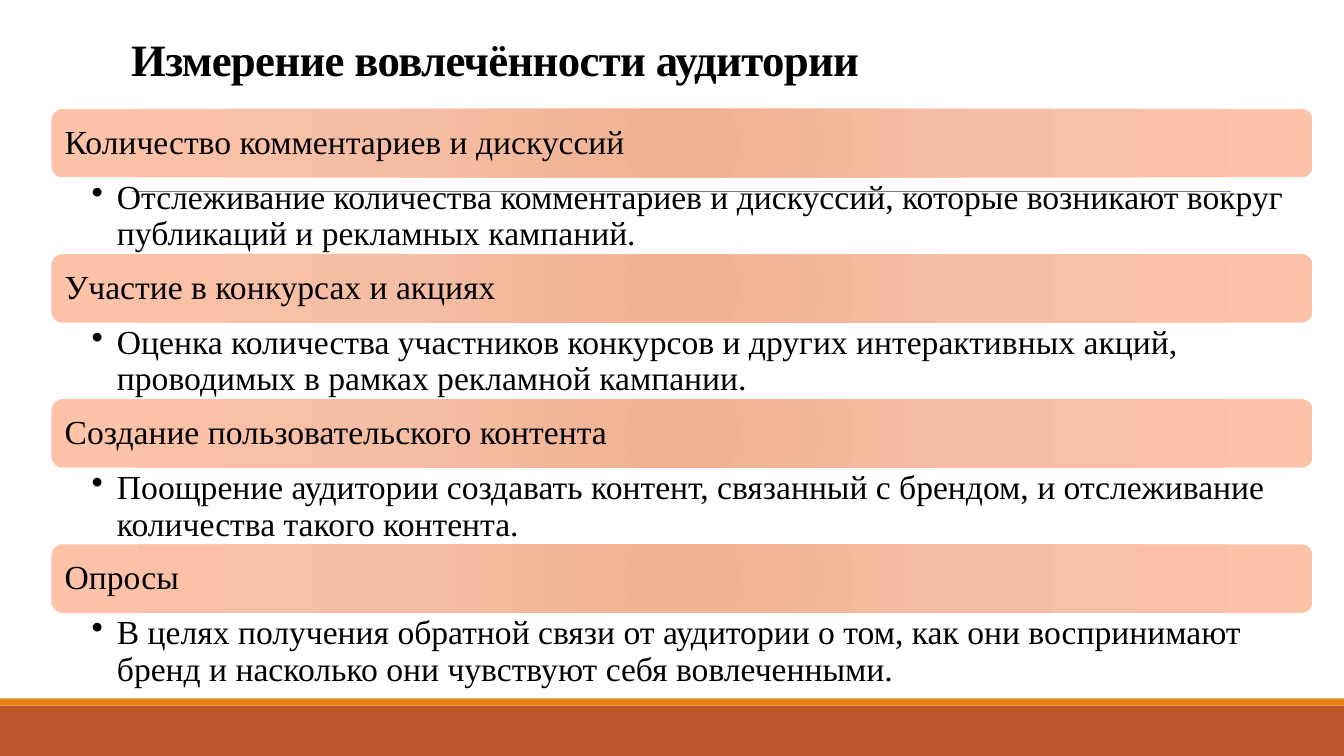
import pptx
import pptx.dml.color
import pptx.enum.shapes
import pptx.enum.text
import pptx.oxml
import pptx.oxml.ns
import pptx.util

PX = 9144  # EMU in one px, at 100 px to the inch
RGB = pptx.dml.color.RGBColor
BLACK = RGB(0x00, 0x00, 0x00)
GREY = RGB(0x80, 0x80, 0x80)
RUST = RGB(0xBD, 0x58, 0x2C)
ORANGE = RGB(0xE4, 0x83, 0x12)
BAR_STOPS = (
    (0, RGB(0xF0, 0xB1, 0x91)),
    (45, RGB(0xF5, 0xBE, 0xA4)),
    (100, RGB(0xFD, 0xC3, 0xA8)),
)
SHAPE = pptx.enum.shapes.MSO_SHAPE
ANCHOR = pptx.enum.text.MSO_ANCHOR
SLIDE_WIDTH, SLIDE_HEIGHT = 1333, 750
BODY_FONT = {"name": "Times New Roman", "size": pptx.util.Pt(24)}
TITLE_FONT = {"name": "Times New Roman", "size": pptx.util.Pt(32), "bold": True}

TITLE = "Измерение вовлечённости аудитории"
METRICS = (
    ("Количество комментариев и дискуссий",
     "Отслеживание количества комментариев и дискуссий, которые возникают "
     "вокруг публикаций и рекламных кампаний."),
    ("Участие в конкурсах и акциях",
     "Оценка количества участников конкурсов и других интерактивных акций, "
     "проводимых в рамках рекламной кампании."),
    ("Создание пользовательского контента",
     "Поощрение аудитории создавать контент, связанный с брендом, "
     "и отслеживание количества такого контента."),
    ("Опросы",
     "В целях получения обратной связи от аудитории о том, как они "
     "воспринимают бренд и насколько они чувствуют себя вовлеченными."),
)


def emu(*lengths):
    return [length * PX for length in lengths]


def xml(tag, inner="", attributes=""):
    namespace = pptx.oxml.ns.nsdecls("a")
    return pptx.oxml.parse_xml(
        f"<a:{tag} {namespace} {attributes}>{inner}</a:{tag}>")


def write(frame, text, font, anchor, insets, line_spacing):
    """Put one formatted left-aligned paragraph in the frame; return it."""
    left, top, right, bottom = emu(*insets)
    frame_format = {
        "word_wrap": True,
        "auto_size": pptx.enum.text.MSO_AUTO_SIZE.NONE,
        "vertical_anchor": anchor,
        "margin_left": left,
        "margin_top": top,
        "margin_right": right,
        "margin_bottom": bottom,
    }
    for name, value in frame_format.items():
        setattr(frame, name, value)
    paragraph = frame.paragraphs[0]
    paragraph.alignment = pptx.enum.text.PP_ALIGN.LEFT
    paragraph.line_spacing = line_spacing
    run = paragraph.add_run()
    run.text = text
    for name, value in font.items():
        setattr(run.font, name, value)
    run.font.color.rgb = BLACK
    return paragraph


def add_plain_shape(slide, kind, box):
    shape = slide.shapes.add_shape(kind, *emu(*box))
    shape.shadow.inherit = False
    shape.line.fill.background()
    return shape


def add_footer(slide, left, top, width, height):
    stripe = 7
    bands = ((RUST, top + stripe, height - stripe), (ORANGE, top, stripe))
    for color, band_top, band_height in bands:
        band = add_plain_shape(slide, SHAPE.RECTANGLE,
                               (left, band_top, width, band_height))
        band.fill.solid()
        band.fill.fore_color.rgb = color


def add_rule(slide, left, top, width):
    rule = slide.shapes.add_connector(
        pptx.enum.shapes.MSO_CONNECTOR.STRAIGHT,
        *emu(left, top, left + width, top))
    rule.line.color.rgb = GREY
    rule.line.width = pptx.util.Pt(0.5)
    rule._element.spPr.append(xml("effectLst"))


def fill_title(slide, left, top, width, height):
    title = slide.shapes.title
    title.left, title.top, title.width, title.height = emu(left, top, width, height)
    paragraph = write(title.text_frame, TITLE, TITLE_FONT, ANCHOR.BOTTOM,
                      (10, 5, 10, 5), 0.85)
    paragraph.runs[0].font._element.set("spc", "-50")


def fill_radially(shape):
    stops = "".join(
        f'<a:gs pos="{percent * 1000}"><a:srgbClr val="{color}"/></a:gs>'
        for percent, color in BAR_STOPS)
    focus = " ".join(f'{side}="100000"' for side in "ltrb")
    gradient = xml("gradFill",
                   f"<a:gsLst>{stops}</a:gsLst>"
                   f'<a:path path="circle"><a:fillToRect {focus}/></a:path>')
    shape.fill.background()
    properties = shape._element.spPr
    properties.replace(properties.find(pptx.oxml.ns.qn("a:noFill")), gradient)


def add_metric(slide, heading, detail, left, top, width, height):
    """Place a heading bar with its bulleted detail below it."""
    bar_height = 68
    bar = add_plain_shape(slide, SHAPE.ROUNDED_RECTANGLE,
                          (left, top, width, bar_height))
    fill_radially(bar)
    write(bar.text_frame, heading, BODY_FONT, ANCHOR.MIDDLE,
          (10, 10, 10, 10), 0.9)

    note = slide.shapes.add_textbox(
        *emu(left, top + bar_height, width, height - bar_height))
    paragraph = write(note.text_frame, detail, BODY_FONT, ANCHOR.TOP,
                      (40, 3, 19, 3), 0.9)
    paragraph.level = 1
    bullet_format = paragraph._p.get_or_add_pPr()
    bullet_format.set("marL", str(25 * PX))
    bullet_format.set("indent", str(-25 * PX))
    bullet_format.append(xml("buChar", attributes='char="•"'))


def add_metrics(slide, left, top, width, height):
    pitch = height // len(METRICS)
    for row, (heading, detail) in enumerate(METRICS):
        add_metric(slide, heading, detail,
                   left, top + row * pitch, width, pitch)


def main():
    deck = pptx.Presentation()
    deck.slide_width, deck.slide_height = emu(SLIDE_WIDTH, SLIDE_HEIGHT)
    slide = deck.slides.add_slide(deck.slide_layouts.get_by_name("Title Only"))
    add_footer(slide, 0, 693, SLIDE_WIDTH, SLIDE_HEIGHT - 693)
    add_rule(slide, 131, 190, 1090)
    fill_title(slide, 120, 31, 1100, 59)
    add_metrics(slide, 51, 108, 1251, 576)
    deck.save("out.pptx")


if __name__ == "__main__":
    main()
